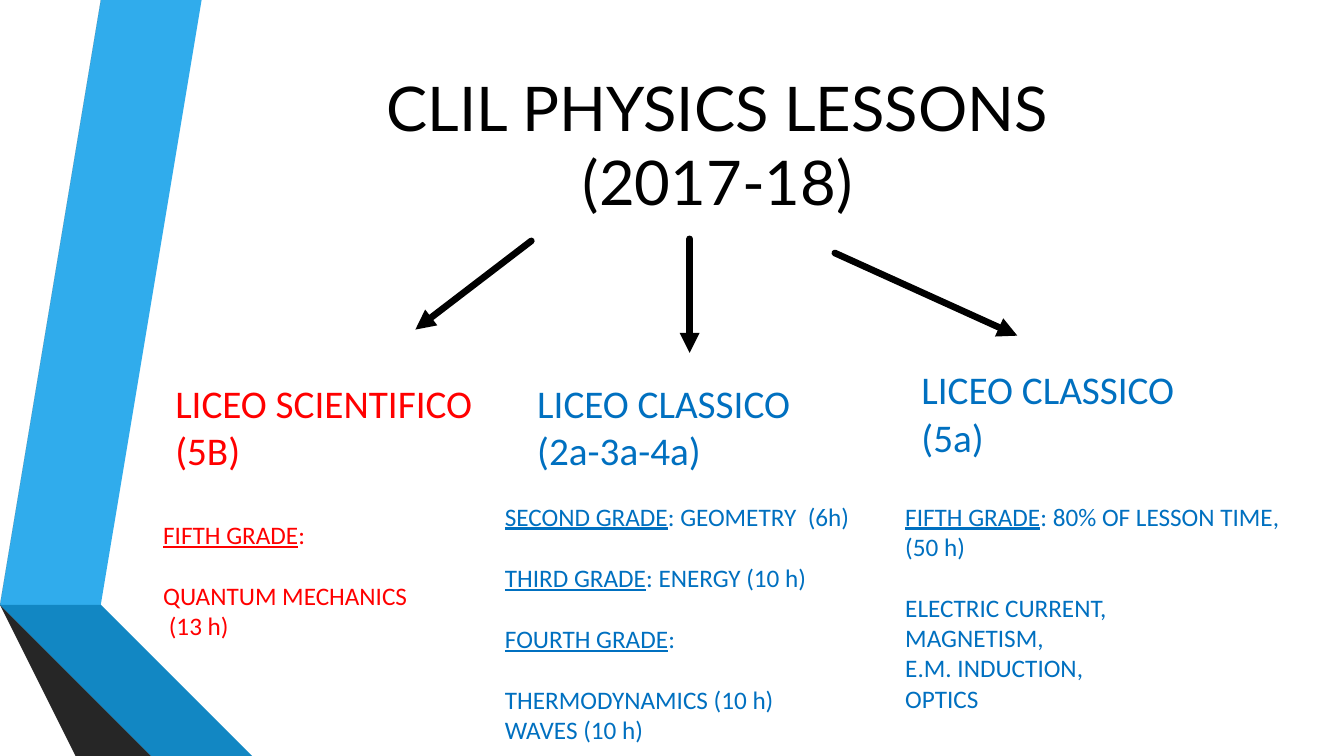
from lxml import etree
from pptx import Presentation
from pptx.dml.color import RGBColor
from pptx.enum import text
from pptx.oxml import ns
from pptx.util import Inches, Pt

BLACK, RED, BLUE = "000000", "FF0000", "0070C0"

RIBBONS = [
    ("30ACEC", [(0.5, 5.78), (0.77, 5.83), (1.73, 0), (1.45, 0)]),
    ("595959", [(1.39, 0), (1.11, 0), (0.16, 5.73), (0.44, 5.77)]),
    ("262626", [(0.16, 5.73), (1.45, 7.5), (1.51, 7.5)]),
    ("0C5A82", [(0.5, 5.79), (2.08, 7.5), (2.14, 7.5)]),
    ("1287C3", [(0.5, 5.79), (2.14, 7.5), (2.83, 7.5), (0.77, 5.83), (0.5, 5.78)]),
    ("404040", [(2.02, 7.5), (0.48, 5.83), (0.43, 5.77), (0.16, 5.73), (1.51, 7.5)]),
]

ARROWS = [
    ((5.27, 2.39), (4.12, 3.27)),
    ((6.84, 2.37), (6.84, 3.5)),
    ((8.28, 2.51), (10.09, 3.33)),
]

SCHOOLS = [
    (RED, (1.64, 3.71, 3.47, 1.04), ["LICEO SCIENTIFICO", "(5B)"]),
    (BLUE, (5.23, 3.71, 3.12, 1.04), ["LICEO CLASSICO", "(2a-3a-4a)"]),
    (BLUE, (9.04, 3.58, 3.12, 1.04), ["LICEO CLASSICO", "(5a)"]),
]

# Each inner list is a block of lines; the part before "|" is underlined.
PROGRAMMES = [
    (RED, (1.52, 5.1, 2.81, 1.62), [
        ["FIFTH GRADE|:"],
        ["QUANTUM MECHANICS", " (13 h)"],
    ]),
    (BLUE, (4.91, 4.92, 3.86, 2.52), [
        ["SECOND GRADE|: GEOMETRY  (6h)"],
        ["THIRD GRADE|: ENERGY (10 h)"],
        ["FOURTH GRADE|:"],
        ["THERMODYNAMICS (10 h)", "WAVES (10 h)"],
    ]),
    (BLUE, (8.88, 4.92, 4.19, 2.22), [
        ["FIFTH GRADE|: 80% OF LESSON TIME,", "(50 h)"],
        ["ELECTRIC CURRENT,", "MAGNETISM,", "E.M. INDUCTION,", "OPTICS"],
    ]),
]


def rgb(hex_color):
    return RGBColor.from_string(hex_color)


class LessonSlide:
    title_font, body_font = "Lato", "Calibri"
    block_gap = Pt(22)
    arrow_width = Pt(4.75)

    def __init__(self, prs):
        self.s = prs.slides.add_slide(prs.slide_layouts[5])

    def style(self, r, font, size, color):
        r.font.name, r.font.size = font, Pt(size)
        r.font.color.rgb = rgb(color)

    def ribbon(self, color, points):
        builder = self.s.shapes.build_freeform(*points[0], scale=Inches(1))
        builder.add_line_segments(points[1:], close=True)
        sp = builder.convert_to_shape()
        sp.shadow.inherit = False
        sp.fill.solid()
        sp.fill.fore_color.rgb = rgb(color)
        sp.line.fill.background()

    def title(self, box, wording):
        sp = self.s.shapes.title
        sp.left, sp.top, sp.width, sp.height = map(Inches, box)
        tf = sp.text_frame
        tf.text = wording
        tf.auto_size = text.MSO_AUTO_SIZE.NONE
        tf.vertical_anchor = text.MSO_ANCHOR.MIDDLE
        p = tf.paragraphs[0]
        p.alignment = text.PP_ALIGN.CENTER
        for r in p.runs:
            self.style(r, self.title_font, 44, BLACK)

    def arrow(self, start, end):
        ends = map(Inches, (*start, *end))
        c = self.s.shapes.add_connector(1, *ends)
        c.line.color.rgb = rgb(BLACK)
        c.line.width = self.arrow_width
        ln = c.line._get_or_add_ln()
        ln.set("cap", "rnd")
        etree.SubElement(ln, ns.qn("a:round"))
        etree.SubElement(ln, ns.qn("a:tailEnd"), type="triangle")
        etree.SubElement(c._element.spPr, ns.qn("a:effectLst"))

    def text_box(self, color, box, blocks, size):
        """Write blocks of lines, with a gap before each block but the first."""
        tf = self.s.shapes.add_textbox(*map(Inches, box)).text_frame
        tf.word_wrap = True
        p = None
        for block in blocks:
            for i, line in enumerate(block):
                first = p is None
                p = tf.paragraphs[0] if first else tf.add_paragraph()
                if i == 0 and not first:
                    p.space_before = self.block_gap
                label, bar, rest = line.partition("|")
                p.text = label
                if bar:
                    p.runs[0].font.underline = True
                    p.add_run().text = rest
                for r in p.runs:
                    self.style(r, self.body_font, size, color)


def main():
    prs = Presentation()
    prs.slide_width, prs.slide_height = Inches(13.33), Inches(7.5)
    slide = LessonSlide(prs)
    for color, points in RIBBONS:
        slide.ribbon(color, points)
    slide.title((1.64, 0.47, 10.96, 1.92), "CLIL PHYSICS LESSONS\v(2017-18)")
    for start, end in ARROWS:
        slide.arrow(start, end)
    for color, box, lines in SCHOOLS:
        slide.text_box(color, box, [lines], 28)
    for color, box, blocks in PROGRAMMES:
        slide.text_box(color, box, blocks, 18)
    prs.save("out.pptx")


if __name__ == "__main__":
    main()
